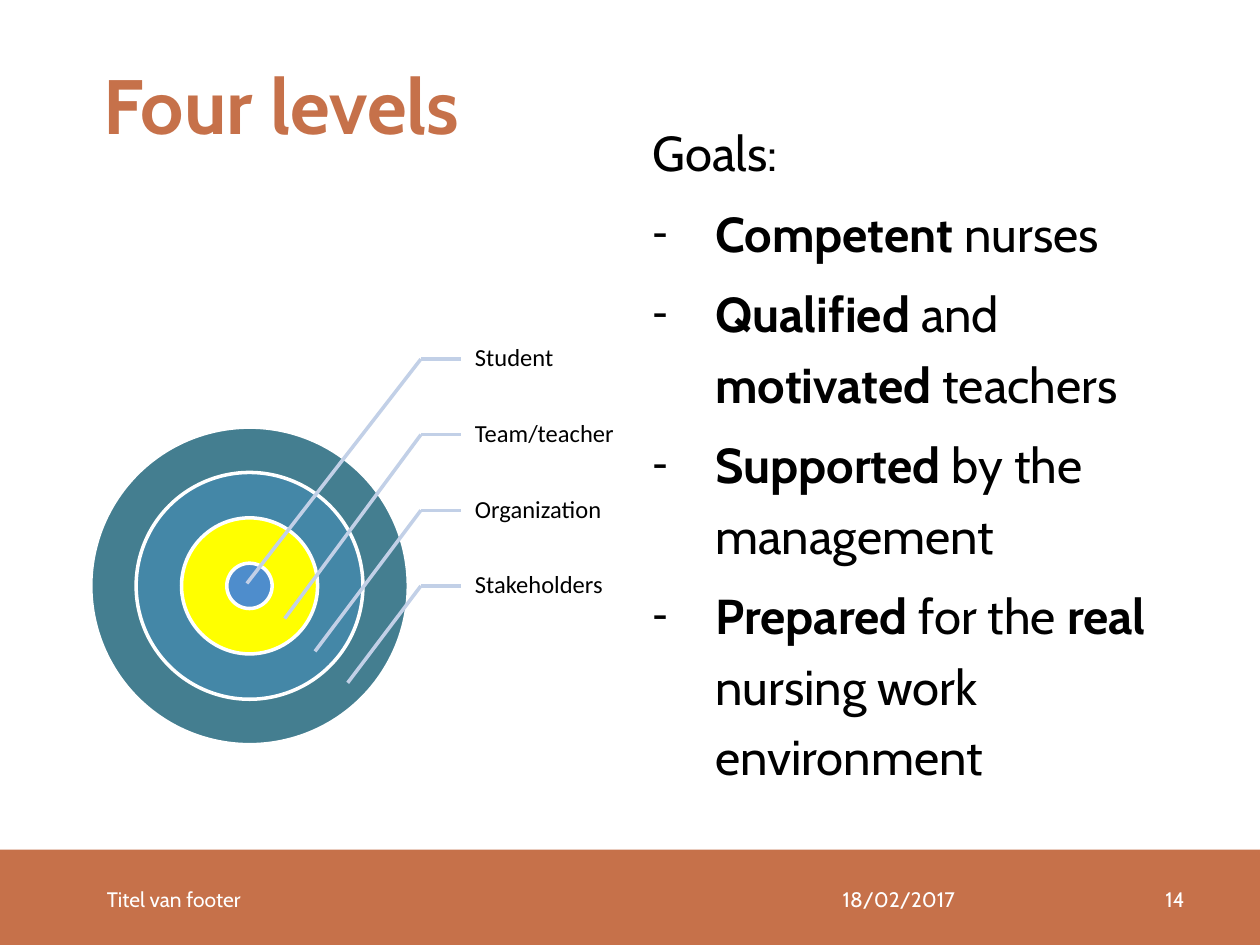
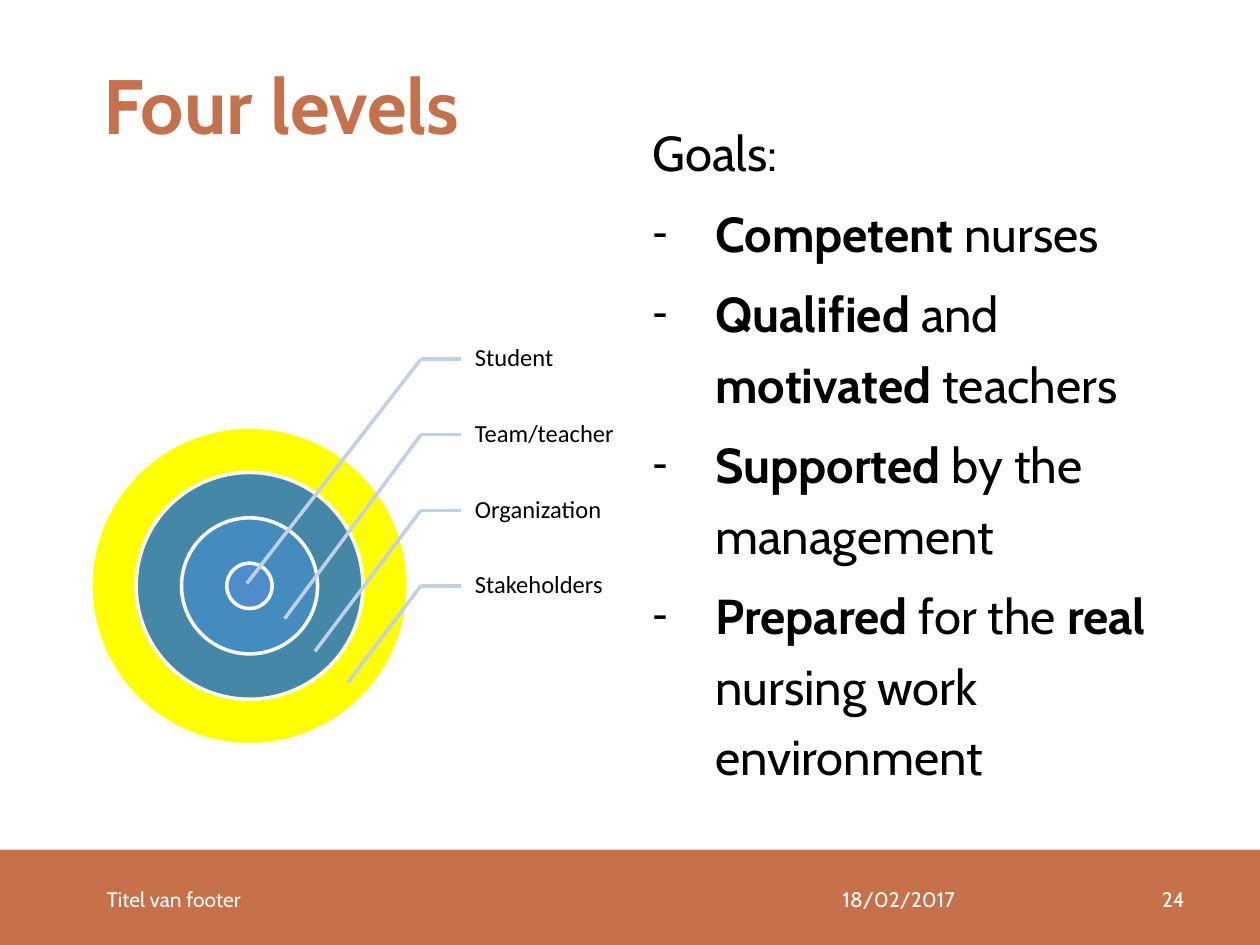
from lxml import etree
from pptx import Presentation
from pptx.dml.color import RGBColor
from pptx.enum.shapes import MSO_CONNECTOR, MSO_SHAPE
from pptx.enum.text import MSO_ANCHOR, MSO_AUTO_SIZE, PP_ALIGN
from pptx.oxml.ns import qn
from pptx.util import Pt

STRAIGHT = MSO_CONNECTOR.STRAIGHT
RECTANGLE, OVAL = MSO_SHAPE.RECTANGLE, MSO_SHAPE.OVAL
TOP, MIDDLE = MSO_ANCHOR.TOP, MSO_ANCHOR.MIDDLE
LEFT, RIGHT = PP_ALIGN.LEFT, PP_ALIGN.RIGHT
NO_AUTOFIT = MSO_AUTO_SIZE.NONE
LEFT_SIDE = 1

# Shared look
TITLE_ONLY_LAYOUT = 5
HEADING_FONT, LABEL_FONT = "Cabin", "Calibri"
TERRACOTTA, WHITE, BLACK = "C6714A", "FFFFFF", "000000"
LEADER_COLOR, HIGHLIGHT = "C2D0E7", "FFFF00"
DEFAULT_INSETS = (7.2, 3.6, 7.2, 3.6)

# Level diagram, from the innermost ring outwards:
# name, ring colour, end point of its leader line
LEVELS = [
    ("Student", "4E8DCC", (141.1, 333.4)),
    ("Team/teacher", "448CBF", (162.7, 353.5)),
    ("Organization", "4487A7", (180, 372.2)),
    ("Stakeholders", "447E90", (198.7, 390.2)),
]
CENTER_X, CENTER_Y = 142.6, 334.8
CORE_DIAMETER = 25.92
RING_STEP = 2 * CORE_DIAMETER
LABEL_LEFT, LABEL_TOP, LABEL_WIDTH, LABEL_HEIGHT = 263.5, 183.6, 90.7, 43.2
ELBOW_X = 240.5

# Each goal is a list of (text, bold) runs
GOALS = [
    [("Competent", True), (" nurses", False)],
    [("Qualified ", True), ("and ", False), ("motivated ", True), ("teachers", False)],
    [("Supported ", True), ("by the management", False)],
    [("Prepared ", True), ("for the ", False), ("real ", True),
     ("nursing work environment", False)],
]


def rgb(hex_color):
    return RGBColor.from_string(hex_color)


def place(shape, left, top, width, height):
    shape.left, shape.top = Pt(left), Pt(top)
    shape.width, shape.height = Pt(width), Pt(height)


def write(frame, paragraphs, *, size, font=HEADING_FONT, color=BLACK, bold=False,
          align=LEFT, anchor=MIDDLE, insets=DEFAULT_INSETS, line_spacing=1.0,
          space_before=0):
    """Fill a text frame; a paragraph is a string or a list of (text, bold) runs."""
    frame.word_wrap = True
    frame.auto_size = NO_AUTOFIT
    frame.vertical_anchor = anchor
    (frame.margin_left, frame.margin_top,
     frame.margin_right, frame.margin_bottom) = map(Pt, insets)
    for index, content in enumerate(paragraphs):
        paragraph = frame.add_paragraph() if index else frame.paragraphs[0]
        paragraph.alignment = align
        paragraph.line_spacing = line_spacing
        paragraph.space_before = Pt(space_before)
        runs = [(content, bold)] if isinstance(content, str) else content
        for text, is_bold in runs:
            run = paragraph.add_run()
            run.text = text
            run.font.name, run.font.size = font, Pt(size)
            run.font.bold = is_bold
            run.font.color.rgb = rgb(color)


def add_text(slide, box, paragraphs, **text_format):
    holder = slide.shapes.add_textbox(*map(Pt, box))
    write(holder.text_frame, paragraphs, **text_format)
    return holder


def add_filled(slide, preset, box, fill, line=None):
    shape = slide.shapes.add_shape(preset, *map(Pt, box))
    shape.shadow.inherit = False
    shape.fill.solid()
    shape.fill.fore_color.rgb = rgb(fill)
    if line:
        shape.line.color.rgb = rgb(line)
        shape.line.width = Pt(2)
    else:
        shape.line.fill.background()


def add_leader(slide, start, end):
    leader = slide.shapes.add_connector(STRAIGHT, *map(Pt, (*start, *end)))
    leader.line.color.rgb = rgb(LEADER_COLOR)
    leader.line.width = Pt(2)
    etree.SubElement(leader.element.spPr, qn("a:effectLst"))
    return leader


def add_dash(paragraph, indent):
    properties = paragraph._p.get_or_add_pPr()
    properties.set("marL", str(Pt(indent)))
    properties.set("indent", str(-Pt(indent)))
    etree.SubElement(properties, qn("a:buFont")).set("typeface", LABEL_FONT)
    etree.SubElement(properties, qn("a:buChar")).set("char", "-")


def add_levels(slide, highlighted):
    # Rings, the largest at the back
    for index, (name, color, _) in reversed(list(enumerate(LEVELS))):
        diameter = CORE_DIAMETER + index * RING_STEP
        box = (CENTER_X - diameter / 2, CENTER_Y - diameter / 2, diameter, diameter)
        add_filled(slide, OVAL, box, HIGHLIGHT if name == highlighted else color, WHITE)

    # Labels with their two-part leader lines
    for index, (name, _, tip) in enumerate(LEVELS):
        top = LABEL_TOP + index * LABEL_HEIGHT
        elbow = (ELBOW_X, top + LABEL_HEIGHT / 2)
        label = add_text(slide, (LABEL_LEFT, top, LABEL_WIDTH, LABEL_HEIGHT), [name],
                         size=14, font=LABEL_FONT, line_spacing=0.9,
                         insets=(7.9, 1.4, 1.4, 1.4))
        stub = add_leader(slide, elbow, (LABEL_LEFT, elbow[1]))
        stub.end_connect(label, LEFT_SIDE)
        add_leader(slide, elbow, tip)


def add_goals(slide):
    goals = add_text(slide, (365.8, 59.8, 318.2, 422.6), ["Goals:", *GOALS],
                     size=28, anchor=TOP, line_spacing=1.2, space_before=5.6)
    for goal in goals.text_frame.paragraphs[1:]:
        add_dash(goal, 36)


def add_footer(slide, number):
    footer_parts = [
        ("18/02/2017", 474.5, 167.8, LEFT),
        ("Titel van footer", 54, 416.9, LEFT),
        (number, 642.2, 41.8, RIGHT),
    ]
    for text, left, width, align in footer_parts:
        add_text(slide, (left, 499.7, width, 28.8), [text],
                 size=12, color=WHITE, align=align)


def add_levels_slide(deck, number, highlighted):
    slide = deck.slides.add_slide(deck.slide_layouts[TITLE_ONLY_LAYOUT])
    add_filled(slide, RECTANGLE, (0, 485.5, 720, 54.5), TERRACOTTA)
    title = slide.shapes.title
    place(title, 51.8, 14.4, 632.2, 90)
    write(title.text_frame, ["Four levels"], size=44, color=TERRACOTTA, bold=True)
    add_levels(slide, highlighted)
    add_goals(slide)
    add_footer(slide, number)


def main():
    deck = Presentation()
    deck.slide_width, deck.slide_height = Pt(720), Pt(540)
    add_levels_slide(deck, "14", "Team/teacher")
    add_levels_slide(deck, "24", "Stakeholders")
    deck.save("out.pptx")


if __name__ == "__main__":
    main()
